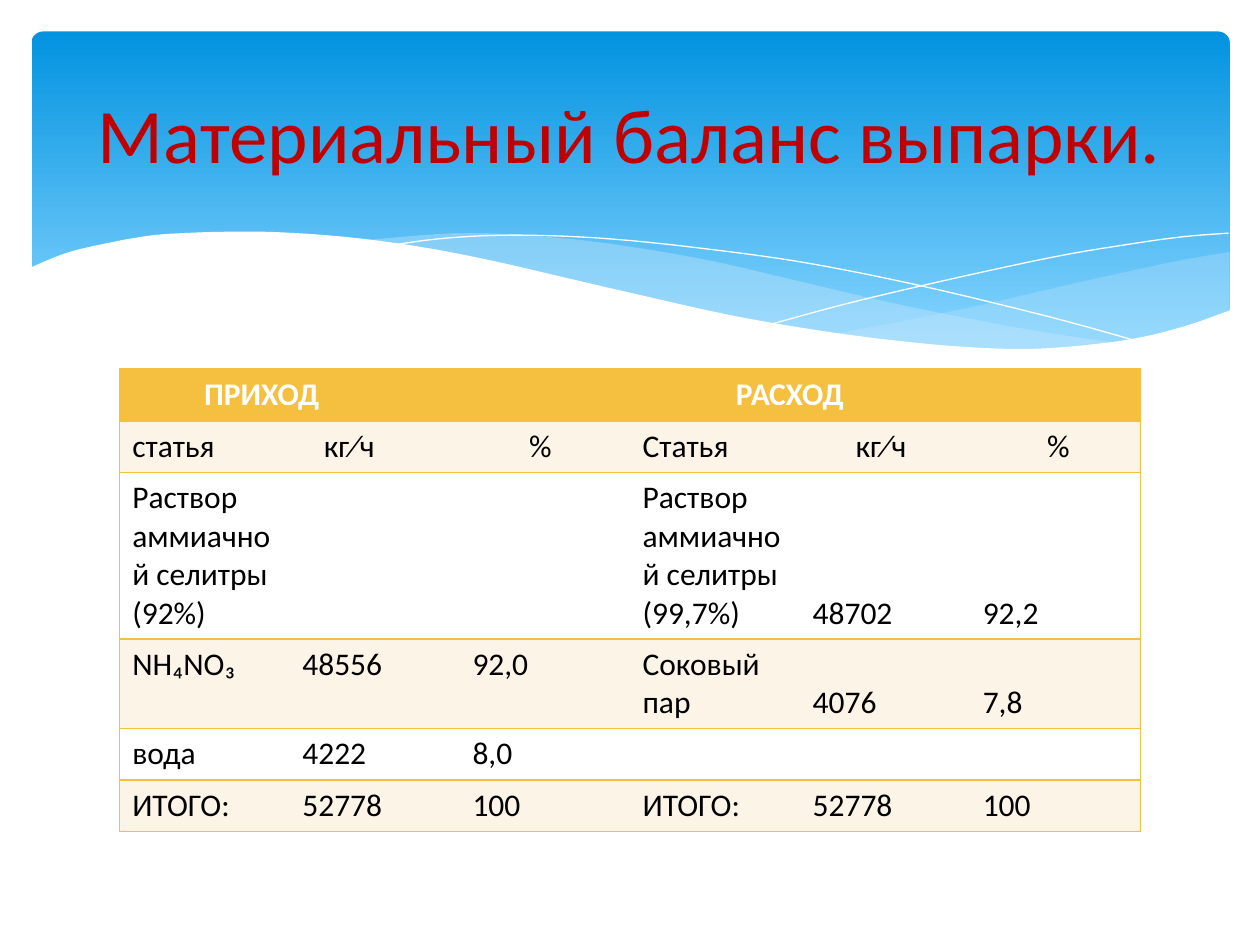
import lxml.etree
import pptx
import pptx.dml.color
import pptx.enum.dml
import pptx.enum.shapes
import pptx.enum.text
import pptx.oxml
import pptx.oxml.ns
import pptx.util

Inches = pptx.util.Inches
RGBColor = pptx.dml.color.RGBColor
WHITE = RGBColor(0xFF, 0xFF, 0xFF)
BLACK = RGBColor(0x00, 0x00, 0x00)
SKY_TOP = RGBColor(0x02, 0x93, 0xE0)
SKY_BOTTOM = RGBColor(0x83, 0xD3, 0xFE)
PALE_BLUE = RGBColor(0xC6, 0xE7, 0xFC)
GOLD = RGBColor(0xF5, 0xC0, 0x40)
CREAM = RGBColor(0xFD, 0xF4, 0xE8)
TITLE_RED = RGBColor(0xC0, 0x00, 0x00)
FONT = "Calibri"
qn = pptx.oxml.ns.qn


def smooth(points, steps=5):
    """Return points along a Catmull-Rom curve through the given points."""
    padded = [points[0], *points, points[-1]]
    curve = [points[0]]
    for a, b, c, d in zip(padded, padded[1:], padded[2:], padded[3:]):
        for step in range(1, steps + 1):
            t = step / steps
            curve.append(tuple(
                0.5 * (2 * q + (r - p) * t + (2 * p - 5 * q + 4 * r - s) * t ** 2
                       + (3 * q - p - 3 * r + s) * t ** 3)
                for p, q, r, s in zip(a, b, c, d)))
    return curve


def add_outline(slide, points, closed):
    corners = [(Inches(x), Inches(y)) for x, y in points]
    builder = slide.shapes.build_freeform(*corners[0])
    builder.add_line_segments(corners[1:], close=closed)
    outline = builder.convert_to_shape()
    outline.shadow.inherit = False
    return outline


deck = pptx.Presentation()
deck.slide_width, deck.slide_height = Inches(10), Inches(7.5)
slide = deck.slides.add_slide(deck.slide_layouts[6])

# Header panel
panel = slide.shapes.add_shape(
    pptx.enum.shapes.MSO_SHAPE.ROUNDED_RECTANGLE,
    Inches(0.25), Inches(0.25), Inches(9.51), Inches(2.7))
panel.adjustments[0] = 0.034
panel.shadow.inherit = False
panel.line.fill.background()
panel.fill.gradient()
panel.fill.gradient_angle = 270
for stop, position, color in zip(panel.fill.gradient_stops, (0, 0.9), (SKY_TOP, SKY_BOTTOM)):
    stop.position = position
    stop.color.rgb = color

# Waves: the edges of each filled area, its colour and its opacity in percent
right_wave = [
    [(9.76, 2), (9.35, 2.07), (8.61, 2.23), (7.79, 2.42), (7.06, 2.57), (6.61, 2.65)],
    [(6.61, 2.65), (7.05, 2.71), (7.57, 2.76), (8.03, 2.78), (8.54, 2.76),
     (8.97, 2.7), (9.35, 2.62), (9.76, 2.47)],
]
long_wave = [
    [(8.93, 2.73), (8.37, 2.65), (7.75, 2.54), (7.06, 2.4), (6.29, 2.22), (5.69, 2.08),
     (5.14, 1.98), (4.65, 1.91), (4.2, 1.87), (3.8, 1.85), (3.44, 1.86), (2.86, 1.91)],
    [(2.86, 1.91), (3.42, 1.99), (4.04, 2.11), (4.49, 2.22), (5.3, 2.4), (6.01, 2.55),
     (6.65, 2.66), (7.22, 2.74), (7.73, 2.77), (8.18, 2.78), (8.57, 2.77), (8.93, 2.73)],
]
long_line = [(3.09, 1.95), (3.44, 1.9), (3.87, 1.87), (4.33, 1.87), (4.89, 1.9), (5.56, 1.97),
             (6.36, 2.08), (7.27, 2.26), (8.31, 2.51), (9.07, 2.72)]
right_line = [(6.13, 2.57), (6.72, 2.41), (7.48, 2.23), (8.36, 2.04), (8.95, 1.94),
              (9.38, 1.88), (9.75, 1.85)]
white_wave = [
    [(9.77, 2.46), (9.4, 2.59), (8.99, 2.69), (8.5, 2.75), (8.09, 2.77), (7.61, 2.75),
     (7.08, 2.7), (6.48, 2.62), (5.79, 2.5), (5.03, 2.33), (4.47, 2.2), (3.91, 2.07),
     (3.4, 1.97), (2.92, 1.9), (2.5, 1.86), (2.11, 1.84), (1.77, 1.84), (1.46, 1.85),
     (1.19, 1.87), (0.85, 1.93), (0.52, 2.01), (0.23, 2.13)],
    [(0.23, 3.29), (9.77, 3.29)],
]

for edges, color, opacity in ((right_wave, PALE_BLUE, 29), (long_wave, PALE_BLUE, 40),
                              (white_wave, WHITE, 100)):
    if edges is white_wave:
        for line_points in (long_line, right_line):
            wave_line = add_outline(slide, smooth(line_points), closed=False)
            wave_line.fill.background()
            wave_line.line.color.rgb = WHITE
            wave_line.line.width = pptx.util.Pt(0)
    upper, lower = edges
    lower = lower if edges is white_wave else smooth(lower)
    wave = add_outline(slide, smooth(upper) + lower, closed=True)
    wave.line.fill.background()
    wave.fill.solid()
    wave.fill.fore_color.rgb = color
    if opacity < 100:
        color_node = wave._element.spPr.find(qn("a:solidFill"))[0]
        lxml.etree.SubElement(color_node, qn("a:alpha"), val=str(opacity * 1000))

# Balance table
rows = [
    ["ПРИХОД", "", "", "РАСХОД", "", ""],
    ["статья", "кг∕ч", "%", "Статья", "кг∕ч", "%"],
    ["Раствор аммиачной селитры (92%)", "", "",
     "Раствор аммиачной селитры (99,7%)", "48702", "92,2"],
    ["NH₄NO₃", "48556", "92,0", "Соковый пар", "4076", "7,8"],
    ["вода", "4222", "8,0", "", "", ""],
    ["ИТОГО:", "52778", "100", "ИТОГО:", "52778", "100"],
    [""] * 6,
]
row_heights = [0.41, 0.41, 1.32, 0.71, 0.41, 0.41, 0.41]
indents = {(0, 0): 0.57, (0, 3): 0.74, (1, 1): 0.17, (1, 2): 0.45, (1, 4): 0.34, (1, 5): 0.51}
last_row, column_count = len(rows) - 1, len(rows[0])

frame = slide.shapes.add_table(len(rows), column_count, Inches(0.95), Inches(2.93),
                               Inches(8.1), Inches(sum(row_heights)))
table = frame.table
table.first_row = table.horz_banding = False
NO_STYLE_NO_GRID = "{2D5ABB26-0587-4C30-8999-92F81FD0307C}"
table._tbl.tblPr.find(qn("a:tableStyleId")).text = NO_STYLE_NO_GRID
for column in table.columns:
    column.width = Inches(1.35)
for row, height in zip(table.rows, row_heights):
    row.height = Inches(height)
for row_index, first, last in ((0, 0, 2), (0, 3, 5), (last_row, 0, 5)):
    table.cell(row_index, first).merge(table.cell(row_index, last))

for i, texts in enumerate(rows):
    for j, text in enumerate(texts):
        cell = table.cell(i, j)
        sides = ["a:lnT"]
        if i < last_row:
            sides.append("a:lnB")
            if j + cell.span_width == column_count:
                sides.insert(0, "a:lnR")
            if j == 0:
                sides.insert(0, "a:lnL")
        properties = cell._tc.get_or_add_tcPr()
        for side in sides:
            border = lxml.etree.SubElement(properties, qn(side), w=str(pptx.util.Pt(1)))
            border_fill = lxml.etree.SubElement(border, qn("a:solidFill"))
            lxml.etree.SubElement(border_fill, qn("a:srgbClr"), val=str(GOLD))
        cell.fill.solid()
        cell.fill.fore_color.rgb = GOLD if i == 0 else CREAM if i % 2 else WHITE
        cell.margin_left = Inches(0.1 + indents.get((i, j), 0))
        if i in (2, 3) and j >= 4:
            cell.vertical_anchor = pptx.enum.text.MSO_ANCHOR.BOTTOM
        if text:
            cell.text_frame.text = text
            font = cell.text_frame.paragraphs[0].runs[0].font
            font.name, font.size, font.bold = FONT, pptx.util.Pt(18), i == 0
            font.color.rgb = WHITE if i == 0 else BLACK

# Title
title_box = slide.shapes.add_textbox(Inches(0.5), Inches(0.37), Inches(9), Inches(1.37))
title_frame = title_box.text_frame
title_frame.word_wrap = True
title_frame.vertical_anchor = pptx.enum.text.MSO_ANCHOR.MIDDLE
title_frame.text = "Материальный баланс выпарки."
title_para = title_frame.paragraphs[0]
title_para.alignment = pptx.enum.text.PP_ALIGN.CENTER
title_font = title_para.runs[0].font
title_font.name, title_font.size = FONT, pptx.util.Pt(44)
title_font.color.rgb = TITLE_RED

deck.save("out.pptx")
